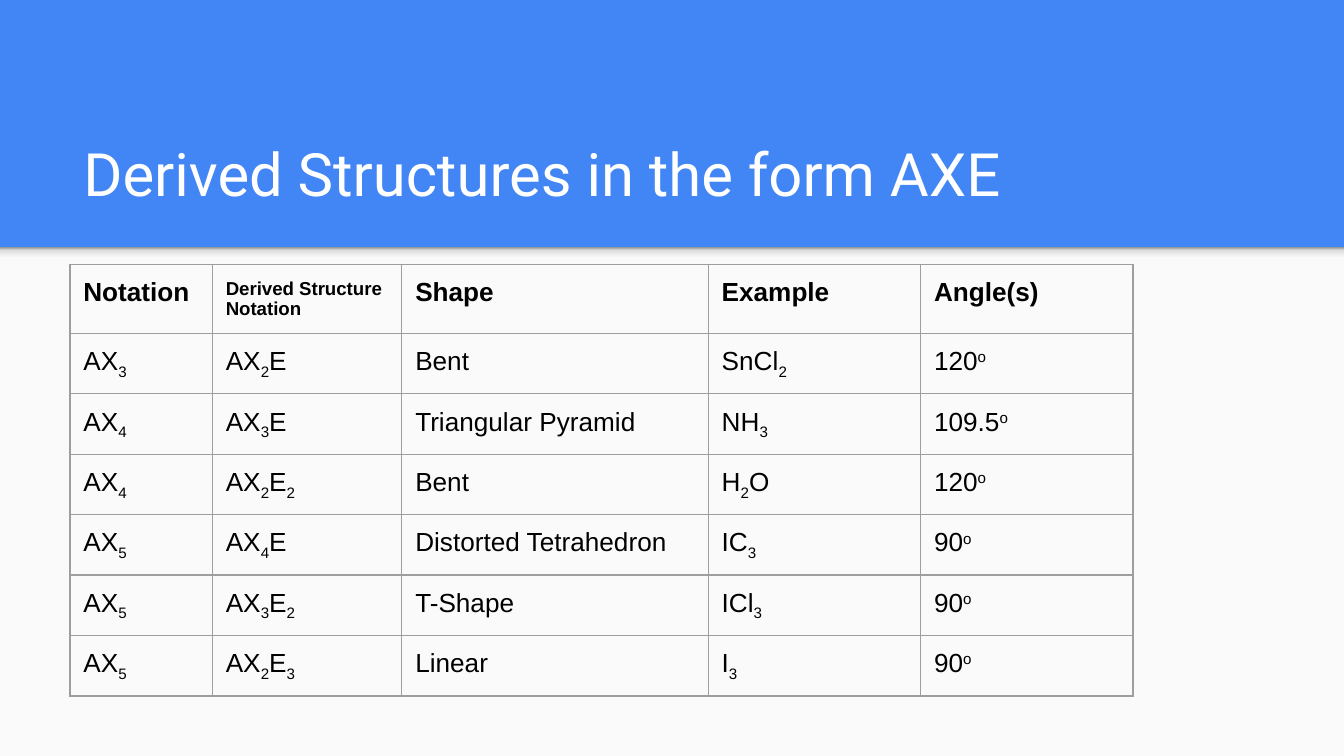
from lxml import etree
from pptx import Presentation
from pptx.dml.color import RGBColor
from pptx.enum import shapes, text
from pptx.oxml import parse_xml
from pptx.oxml.ns import nsdecls, qn
from pptx.util import Inches, Pt

# Content: "_" lowers and "^" raises the next character
TITLE = "Derived Structures in the form AXE"
HEADER = ["Notation", "Derived Structure Notation", "Shape", "Example", "Angle(s)"]
ROWS = [
    ["AX_3", "AX_2E", "Bent", "SnCl_2", "120^o"],
    ["AX_4", "AX_3E", "Triangular Pyramid", "NH_3", "109.5^o"],
    ["AX_4", "AX_2E_2", "Bent", "H_2O", "120^o"],
    ["AX_5", "AX_4E", "Distorted Tetrahedron", "IC_3", "90^o"],
    ["AX_5", "AX_3E_2", "T-Shape", "ICl_3", "90^o"],
    ["AX_5", "AX_2E_3", "Linear", "I_3", "90^o"],
]
COL_WIDTHS = [1.06, 1.41, 2.28, 1.58, 1.58]
ROW_HEIGHT = 0.42
BASELINES = {"_": "-25000", "^": "30000"}

THEME = {
    "band": "4285F4", "panel": "FAFAFA", "title": "FFFFFF", "text": "000000",
    "border": "9E9E9E", "border_pt": 0.75,
    "shadow": [(0, "F9F9F9"), (36, "F9F9F9"), (80, "DEDEDE"), (100, "999999")],
    "title_font": "Roboto", "body_font": "Arial",
    "title_pt": 32, "body_pt": 14, "small_pt": 10,
}


def rgb(name):
    return RGBColor.from_string(THEME[name])


def add_panel(slide, top, width, height):
    sp = slide.shapes.add_shape(shapes.MSO_SHAPE.RECTANGLE, 0, top, width, height)
    sp.shadow.inherit = False
    sp.line.fill.background()
    sp.fill.solid()
    sp.fill.fore_color.rgb = rgb("panel")
    return sp


def set_gradient(sp, stops):
    sp.fill.gradient()
    sp.fill.gradient_angle = 90
    gs_list = sp._element.spPr.find(qn("a:gradFill")).find(qn("a:gsLst"))
    for gs in list(gs_list):
        gs_list.remove(gs)
    for pos, color in stops:
        gs = etree.SubElement(gs_list, qn("a:gs"), pos=str(pos * 1000))
        etree.SubElement(gs, qn("a:srgbClr"), val=color)


def set_font(r, font, size, color, bold=False):
    r.font.name = THEME[font]
    r.font.size = Pt(THEME[size])
    r.font.color.rgb = rgb(color)
    r.font.bold = bold


def split_formula(formula):
    parts, mark = [["", None]], None
    for ch in formula:
        if ch in BASELINES:
            mark = ch
        elif mark or parts[-1][1]:
            parts.append([ch, mark])
            mark = None
        else:
            parts[-1][0] += ch
    return parts


def fill_cell(cell, formula, size, bold):
    cell.margin_left = cell.margin_right = Inches(0.1)
    cell.margin_top = cell.margin_bottom = Inches(0.1)
    p = cell.text_frame.paragraphs[0]
    for part, mark in split_formula(formula):
        r = p.add_run()
        r.text = part
        set_font(r, "body_font", size, "text", bold)
        if mark:
            r.font._element.set("baseline", BASELINES[mark])
    tc_pr = cell._tc.get_or_add_tcPr()
    for side in "LRTB":
        tc_pr.append(parse_xml(
            f'<a:ln{side} {nsdecls("a")} w="{Pt(THEME["border_pt"])}"><a:solidFill>'
            f'<a:srgbClr val="{THEME["border"]}"/></a:solidFill></a:ln{side}>'))
    cell.fill.background()


# Slide in 16:9
prs = Presentation()
prs.slide_width = Inches(10)
prs.slide_height = prs.slide_width * 9 // 16
slide = prs.slides.add_slide(prs.slide_layouts[5])

# Blue background, light panel and the soft shadow along its top
slide.background.fill.solid()
slide.background.fill.fore_color.rgb = rgb("band")
panel_top = Inches(1.84)
add_panel(slide, panel_top, prs.slide_width, prs.slide_height - panel_top)
shadow = add_panel(slide, panel_top, prs.slide_width, Inches(0.12))
set_gradient(shadow, THEME["shadow"])

# Title
title = slide.shapes.title
title.left, title.top = Inches(0.52), Inches(0.81)
title.width, title.height = Inches(8.99), Inches(0.84)
tf = title.text_frame
tf.text = TITLE
tf.word_wrap = True
tf.auto_size = text.MSO_AUTO_SIZE.NONE
tf.vertical_anchor = text.MSO_ANCHOR.BOTTOM
tf.margin_left = tf.margin_right = tf.margin_top = tf.margin_bottom = Inches(0.1)
p = tf.paragraphs[0]
p.alignment = text.PP_ALIGN.LEFT
set_font(p.runs[0], "title_font", "title_pt", "title")

# Table
grid = [HEADER] + ROWS
table = slide.shapes.add_table(
    len(grid), len(HEADER), Inches(0.52), Inches(1.97),
    Inches(sum(COL_WIDTHS)), Inches(ROW_HEIGHT * len(grid))).table
table.first_row = table.horz_banding = False
for column, width in zip(table.columns, COL_WIDTHS):
    column.width = Inches(width)
for i, row in enumerate(grid):
    table.rows[i].height = Inches(ROW_HEIGHT)
    for j, formula in enumerate(row):
        size = "small_pt" if (i, j) == (0, 1) else "body_pt"
        fill_cell(table.cell(i, j), formula, size, bold=i == 0)

prs.save("out.pptx")
